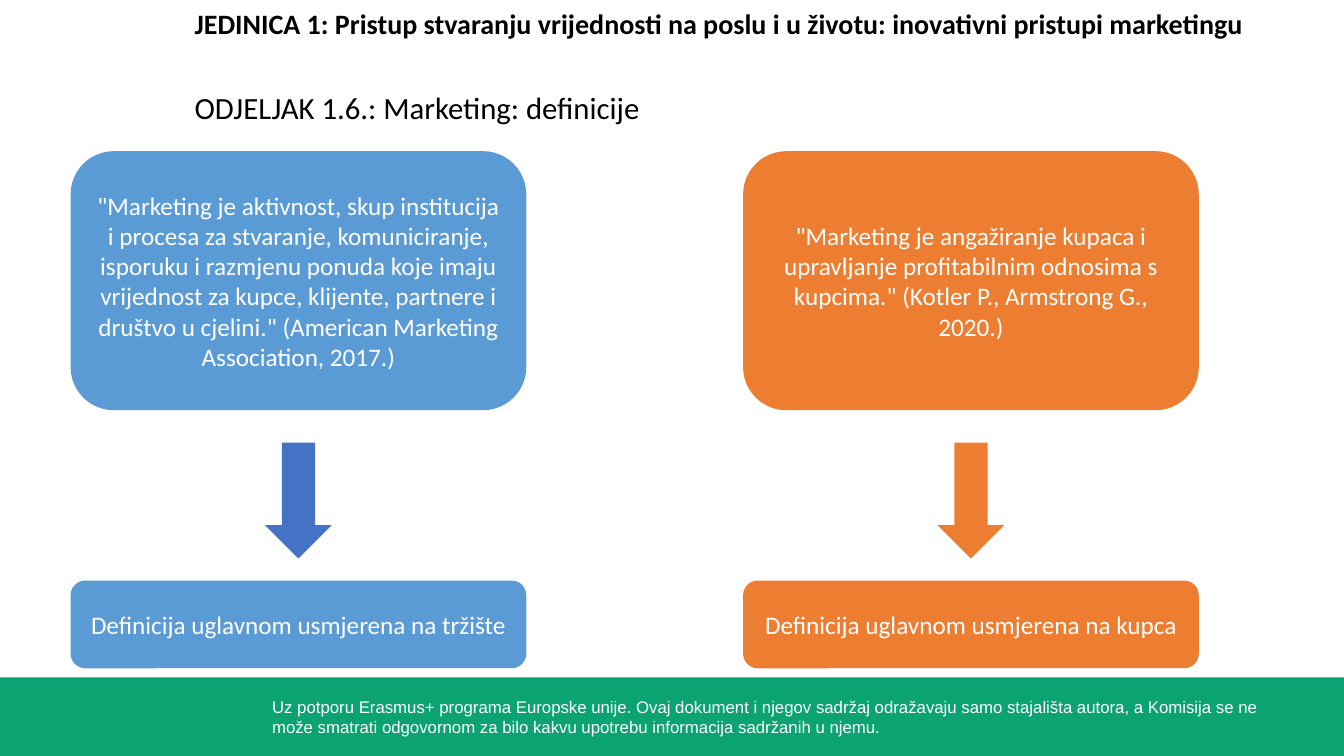
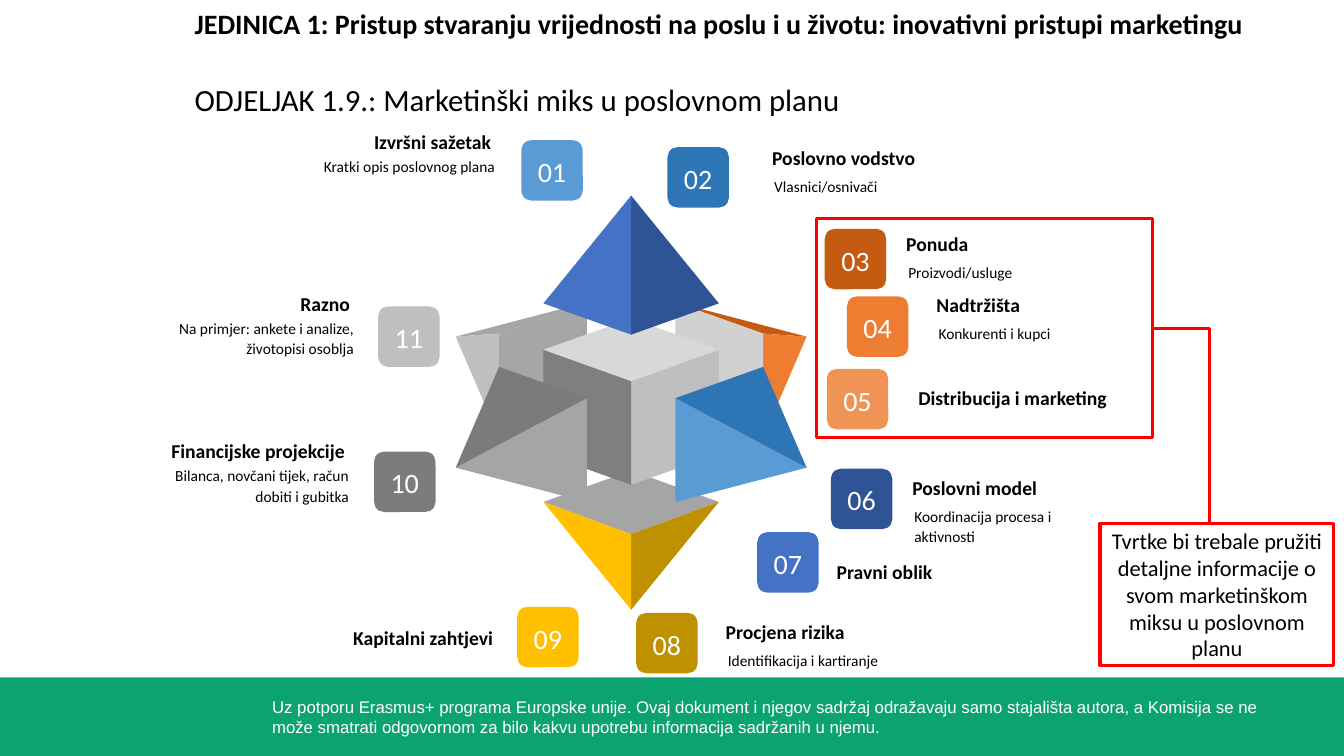
"""Build two marketing slides that share a title style and a footer band."""
from dataclasses import dataclass

import pptx
import pptx.dml.color
import pptx.enum.shapes
import pptx.enum.text
import pptx.oxml
import pptx.oxml.ns
import pptx.util

Inches = pptx.util.Inches
Shape = pptx.enum.shapes.MSO_SHAPE
Align = pptx.enum.text.PP_ALIGN
Anchor = pptx.enum.text.MSO_ANCHOR


@dataclass(frozen=True)
class Theme:
    """Colours, fonts and type sizes."""
    font: str = "Calibri"
    footer_font: str = "Arial"
    black: str = "000000"
    white: str = "FFFFFF"
    green: str = "0CA373"
    red: str = "FF0000"
    sky: str = "5B9BD5"
    ocean: str = "2E75B5"
    blue: str = "4472C4"
    navy: str = "2F5496"
    orange: str = "ED7D31"
    rust: str = "C55A11"
    peach: str = "F09456"
    gold: str = "FFC000"
    bronze: str = "BF9000"
    charcoal: str = "7C7C7C"
    gray: str = "A5A5A5"
    silver: str = "BFBFBF"
    pale: str = "D8D8D8"
    title: int = 20
    section: int = 22
    body: int = 18
    callout: int = 16
    heading: int = 14
    footer: int = 12
    detail: int = 11
    frame_line: float = 2.25


THEME = Theme()
SLIDE_SIZE = (13.33, 7.5)
INSETS = (0.1, 0.05, 0.1, 0.05)

UNIT = "JEDINICA 1: Pristup stvaranju vrijednosti na poslu i u životu: inovativni pristupi marketingu"
FOOTER = ("Uz potporu Erasmus+ programa Europske unije. Ovaj dokument i njegov sadržaj odražavaju samo "
          "stajališta autora, a Komisija se ne može smatrati odgovornom za bilo kakvu upotrebu "
          "informacija sadržanih u njemu.")
DEFINITIONS_SECTION = "ODJELJAK 1.6.: Marketing: definicije"
PLAN_SECTION = "ODJELJAK 1.9.: Marketinški miks u poslovnom planu"
CALLOUT = "Tvrtke bi trebale pružiti detaljne informacije o svom marketinškom miksu u poslovnom planu"

DEFINITIONS = [
    (0.7, THEME.sky, THEME.blue,
     "\"Marketing je aktivnost, skup institucija i procesa za stvaranje, komuniciranje, isporuku i "
     "razmjenu ponuda koje imaju vrijednost za kupce, klijente, partnere i društvo u cjelini.\" "
     "(American Marketing Association, 2017.)",
     "Definicija uglavnom usmjerena na tržište"),
    (7.37, THEME.orange, THEME.orange,
     "\"Marketing je angažiranje kupaca i upravljanje profitabilnim odnosima s kupcima.\" "
     "(Kotler P., Armstrong G., 2020.)",
     "Definicija uglavnom usmjerena na kupca"),
]

# Each entry: badge colour, badge corner, heading corner, alignment, heading, detail.
PLAN_PARTS = [
    (THEME.sky, (5.17, 1.39), (2.54, 1.24), Align.RIGHT, "Izvršni sažetak", "Kratki opis poslovnog plana"),
    (THEME.ocean, (6.62, 1.46), (7.56, 1.4), Align.LEFT, "Poslovno vodstvo", "Vlasnici/osnivači"),
    (THEME.rust, (8.18, 2.27), (8.89, 2.25), Align.LEFT, "Ponuda", "Proizvodi/usluge"),
    (THEME.orange, (8.4, 2.94), (9.19, 2.86), Align.LEFT, "Nadtržišta", "Konkurenti i kupci"),
    (THEME.peach, (8.2, 3.66), (9.01, 3.78), Align.LEFT, "Distribucija i marketing", ""),
    (THEME.navy, (8.24, 4.65), (8.95, 4.67), Align.LEFT, "Poslovni model",
     "Koordinacija procesa i aktivnosti"),
    (THEME.blue, (7.51, 5.28), (8.2, 5.51), Align.LEFT, "Pravni oblik", ""),
    (THEME.bronze, (6.31, 6.08), (7.1, 6.1), Align.LEFT, "Procjena rizika", "Identifikacija i kartiranje"),
    (THEME.gold, (5.13, 6.02), (2.56, 6.16), Align.RIGHT, "Kapitalni zahtjevi", ""),
    (THEME.charcoal, (3.71, 4.48), (1.09, 4.31), Align.RIGHT, "Financijske projekcije",
     "Bilanca, novčani tijek, račun dobiti i gubitka"),
    (THEME.silver, (3.75, 3.04), (1.14, 2.85), Align.RIGHT, "Razno",
     "Na primjer: ankete i analize, životopisi osoblja"),
]

AXIS = 6.26
FACES = [
    (THEME.rust, THEME.gray, [(1.74, 3.34), (0.44, 3), (1.31, 3.31)]),
    (THEME.orange, THEME.silver, [(1.31, 4.34), (1.74, 3.34), (1.31, 3.31)]),
    ("D1D1D1", "A6A6A6", [(1.31, 4.34), (1.31, 3.31), (0.44, 3), (0.44, 4.03)]),
    (THEME.gray, None, [(0, 5.3), (-0.87, 4.98), (0, 4.67), (0.87, 4.98)]),
    (THEME.bronze, THEME.gold, [(0, 6.05), (0, 5.3), (0.87, 4.98)]),
    (THEME.silver, "7F7F7F", [(0, 3.78), (0, 4.81), (0.87, 4.5), (0.87, 3.47)]),
    (THEME.pale, None, [(0, 3.16), (-0.87, 3.47), (0, 3.78), (0.87, 3.47)]),
    (THEME.navy, THEME.blue, [(0, 1.94), (0, 3.32), (0.87, 3.01)]),
    (THEME.sky, THEME.gray, [(1.74, 4.64), (0.44, 4.98), (0.44, 3.95)]),
    (THEME.ocean, "7B7B7B", [(1.31, 3.64), (1.74, 4.64), (0.44, 3.95)]),
]


def rgb(colour):
    """Return a colour object for a hex string."""
    return pptx.dml.color.RGBColor.from_string(colour)


def write(shape, text, size, colour=THEME.black, bold=False, align=Align.LEFT, anchor=Anchor.TOP,
          insets=INSETS, spacing=None, font=THEME.font):
    """Put one formatted paragraph in a shape."""
    frame = shape.text_frame
    frame.word_wrap = True
    frame.auto_size = pptx.enum.text.MSO_AUTO_SIZE.NONE
    frame.vertical_anchor = anchor
    frame.margin_left, frame.margin_top, frame.margin_right, frame.margin_bottom = map(Inches, insets)
    paragraph = frame.paragraphs[0]
    paragraph.alignment = align
    if spacing:
        paragraph.line_spacing = spacing
    run = paragraph.add_run()
    run.text = text
    run.font.name = font
    run.font.size = pptx.util.Pt(size)
    run.font.bold = bold
    run.font.color.rgb = rgb(colour)


def add_text(slide, box, text, size, **style):
    """Add a text box."""
    shape = slide.shapes.add_textbox(*map(Inches, box))
    write(shape, text, size, **style)
    return shape


def paint(shape, fill=None, line=None):
    """Set the fill and outline of a shape and drop its shadow."""
    shape.shadow.inherit = False
    if fill:
        shape.fill.solid()
        shape.fill.fore_color.rgb = rgb(fill)
    else:
        shape.fill.background()
    if line:
        shape.line.color.rgb = rgb(line)
        shape.line.width = pptx.util.Pt(THEME.frame_line)
    else:
        shape.line.fill.background()


def add_shape(slide, kind, box, fill=None, line=None):
    """Add a preset shape."""
    shape = slide.shapes.add_shape(kind, *map(Inches, box))
    paint(shape, fill, line)
    return shape


def add_face(slide, colour, points):
    """Add a filled polygon."""
    corners = [(Inches(x), Inches(y)) for x, y in points]
    builder = slide.shapes.build_freeform(*corners[0])
    builder.add_line_segments(corners[1:], close=True)
    paint(builder.convert_to_shape(), colour)


def add_footer(slide):
    """Build the footer band and hand it to the layout of the slide."""
    layout = slide.slide_layout
    for placeholder in list(layout.placeholders)[1:]:
        layout.shapes.element.remove(placeholder.element)
    band = add_shape(slide, Shape.RECTANGLE, (0, 6.72, SLIDE_SIZE[0], 0.78), THEME.green)
    note = add_text(slide, (2.6, 6.86, 10.42, 0.5), FOOTER, THEME.footer,
                    colour=THEME.white, font=THEME.footer_font)
    for shape in (band, note):
        layout.shapes.element.append(shape.element)


def add_slide(presentation, section, section_top):
    """Add a slide with the unit title and its section line."""
    slide = presentation.slides.add_slide(presentation.slide_layouts[5])
    title = slide.shapes.title
    title.left, title.top, title.width, title.height = map(Inches, (1.92, 0.05, 10.89, 0.35))
    write(title, UNIT, THEME.title, bold=True, insets=(0.01, 0.01, 0, 0))
    add_text(slide, (1.92, section_top, 10.44, 0.39), section, THEME.section, insets=(0.01, 0.02, 0, 0))
    return slide


def add_definitions(slide):
    """Draw each definition, its arrow and its conclusion."""
    width, arrow_width = 4.52, 0.66
    for left, colour, arrow_colour, definition, conclusion in DEFINITIONS:
        for top, height, text in ((1.5, 2.57, definition), (5.76, 0.87, conclusion)):
            card = add_shape(slide, Shape.ROUNDED_RECTANGLE, (left, top, width, height), colour)
            inset = 0.1 + 0.1667 * height * 0.29
            write(card, text, THEME.body, THEME.white, align=Align.CENTER, anchor=Anchor.MIDDLE)
        arrow_left = left + (width - arrow_width) / 2
        add_shape(slide, Shape.DOWN_ARROW, (arrow_left, 4.39, arrow_width, 1.15), arrow_colour)


def add_solid(slide):
    """Draw the cube and pyramids, mirroring each paired face."""
    for right_colour, left_colour, points in FACES:
        add_face(slide, right_colour, [(AXIS + x, y) for x, y in points])
        if left_colour:
            add_face(slide, left_colour, [(AXIS - x, y) for x, y in points])


def add_plan_parts(slide):
    """Draw the numbered badges with their headings and details."""
    for number, (colour, corner, start, align, heading, detail) in enumerate(PLAN_PARTS, 1):
        badge = add_shape(slide, Shape.ROUNDED_RECTANGLE, (*corner, 0.61, 0.6), colour)
        write(badge, f"{number:02d}", THEME.title, THEME.white, align=Align.CENTER,
              anchor=Anchor.MIDDLE, insets=(0, 0.06, 0, 0), spacing=0.89)
        left, top = start
        add_text(slide, (left, top, 2.43, 0.34), heading, THEME.heading, bold=True, align=align)
        if detail:
            shift, drop = (0.49, 0.25) if align == Align.RIGHT else (0.02, 0.29)
            add_text(slide, (left + shift, top + drop, 1.98, 0.5), detail, THEME.detail,
                     align=align, spacing=1.1)


def add_callout(slide):
    """Frame the marketing mix and link it to its callout."""
    add_shape(slide, Shape.RECTANGLE, (8.1, 2.17, 3.33, 2.17), line=THEME.red)
    link = slide.shapes.add_connector(pptx.enum.shapes.MSO_CONNECTOR.ELBOW,
                                      *map(Inches, (11.43, 3.26, 12, 5.18)))
    link.line.color.rgb = rgb(THEME.red)
    link.line.width = pptx.util.Pt(THEME.frame_line)
    properties = link.element.spPr
    properties.find(pptx.oxml.ns.qn("a:prstGeom")).set("prst", "bentConnector2")
    properties.append(pptx.oxml.parse_xml(f"<a:effectLst {pptx.oxml.ns.nsdecls('a')}/>"))
    callout = add_shape(slide, Shape.RECTANGLE, (10.91, 5.19, 2.32, 1.41), line=THEME.red)
    write(callout, CALLOUT, THEME.callout, align=Align.CENTER, anchor=Anchor.MIDDLE)


def main():
    """Build and save the presentation."""
    presentation = pptx.Presentation()
    presentation.slide_width, presentation.slide_height = map(Inches, SLIDE_SIZE)
    definitions = add_slide(presentation, DEFINITIONS_SECTION, 0.86)
    add_footer(definitions)
    add_definitions(definitions)
    plan = add_slide(presentation, PLAN_SECTION, 0.78)
    add_solid(plan)
    add_plan_parts(plan)
    add_callout(plan)
    presentation.save("out.pptx")


if __name__ == "__main__":
    main()
